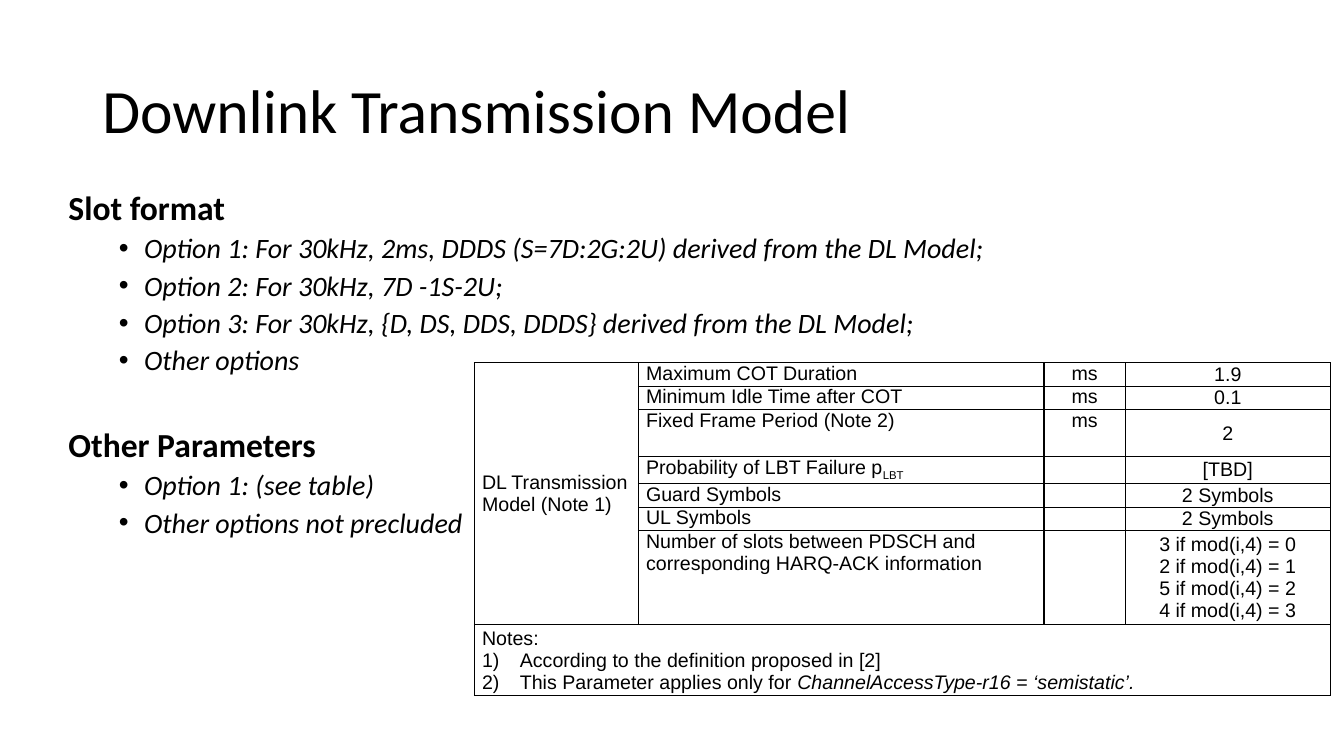
from lxml.etree import SubElement
from pptx import Presentation
from pptx.dml.color import RGBColor
from pptx.enum.text import MSO_ANCHOR, PP_ALIGN
from pptx.oxml import parse_xml
from pptx.oxml.ns import nsdecls, qn
from pptx.util import Pt

# Content
TITLE = "Downlink Transmission Model"
SECTIONS = [
    ("Slot format", [
        "Option 1: For 30kHz, 2ms, DDDS (S=7D:2G:2U) derived from the DL Model;",
        "Option 2: For 30kHz, 7D -1S-2U;",
        "Option 3: For 30kHz, {D, DS, DDS, DDDS} derived from the DL Model;",
        "Other options",
    ]),
    ("Other Parameters", [
        "Option 1: (see table)",
        "Other options not precluded",
    ]),
]
GROUP = "DL Transmission Model (Note 1)"
# Parameter, its subscript, unit, values, row height
PARAMETERS = [
    ("Maximum COT Duration", "", "ms", ["1.9"], 15.7),
    ("Minimum Idle Time after COT", "", "ms", ["0.1"], 15.7),
    ("Fixed Frame Period (Note 2)", "", "ms", ["2"], 33.6),
    ("Probability of LBT Failure p", "LBT", "", ["[TBD]"], 18),
    ("Guard Symbols", "", "", ["2 Symbols"], 15.7),
    ("UL Symbols", "", "", ["2 Symbols"], 15.7),
    ("Number of slots between PDSCH and corresponding HARQ-ACK information", "", "",
     ["3 if mod(i,4) = 0", "2 if mod(i,4) = 1", "5 if mod(i,4) = 2", "4 if mod(i,4) = 3"], 62.9),
]
NOTES_HEADING = "Notes:"
# Plain part, italic part
NOTES = [
    ("According to the definition proposed in [2]", ""),
    ("This Parameter applies only for ", "ChannelAccessType-r16 = ‘semistatic’."),
]
NOTES_HEIGHT = 47.1

# Theme
THEME = {
    "ink": RGBColor(0, 0, 0),
    "title": {"name": "Calibri", "size": Pt(44)},
    "heading": {"name": "Calibri", "size": Pt(24), "bold": True},
    "option": {"name": "Calibri", "size": Pt(20), "italic": True},
    "cell": {"name": "Arial", "size": Pt(14)},
    "border": Pt(1),
}
TITLE_BOX = (66, 28.8, 828, 104.4)
BODY_BOX = (41.8, 133.2, 851.8, 342.7)
TABLE_ORIGIN = (338.9, 259)
COLUMNS = [117.2, 289.6, 58.2, 146.3]
CELL_INSETS = {"margin_left": Pt(5.4), "margin_right": Pt(5.4), "margin_top": 0, "margin_bottom": 0}


def apply(target, values):
    for name, value in values.items():
        setattr(target, name, value)


def add_run(paragraph, text, style, **extra):
    run = paragraph.add_run()
    run.text = text
    apply(run.font, {**THEME[style], **extra})
    run.font.color.rgb = THEME["ink"]
    return run


def add_marker(paragraph, tag, indent, hanging, **attributes):
    properties = paragraph._p.get_or_add_pPr()
    properties.set("marL", str(Pt(indent)))
    properties.set("indent", str(-Pt(hanging)))
    SubElement(properties, qn(tag), **attributes)


def add_box(place, anchor):
    frame = slide.shapes.add_textbox(*map(Pt, place)).text_frame
    apply(frame, {"word_wrap": True, "vertical_anchor": anchor})
    return frame


def next_paragraph(frame):
    first = frame.paragraphs[0]
    return frame.add_paragraph() if first.runs else first


def format_cell(cell, anchor):
    apply(cell, {**CELL_INSETS, "vertical_anchor": anchor})
    cell.fill.background()
    for position, side in enumerate("LRTB"):
        cell._tc.get_or_add_tcPr().insert(position, parse_xml(
            f'<a:ln{side} {nsdecls("a")} w="{THEME["border"]}"><a:solidFill>'
            f'<a:srgbClr val="{THEME["ink"]}"/></a:solidFill></a:ln{side}>'))


def fill_cell(cell, lines, align=PP_ALIGN.LEFT):
    for line in lines:
        paragraph = next_paragraph(cell.text_frame)
        paragraph.alignment = align
        if line:
            add_run(paragraph, line, "cell")
        else:
            size = str(int(THEME["cell"]["size"].pt * 100))
            SubElement(paragraph._p, qn("a:endParaRPr"), sz=size)


deck = Presentation()
apply(deck, {"slide_width": Pt(960), "slide_height": Pt(540)})
slide = deck.slides.add_slide(deck.slide_layouts[6])

# Title
heading_line = add_box(TITLE_BOX, MSO_ANCHOR.MIDDLE).paragraphs[0]
heading_line.line_spacing = 0.9
add_run(heading_line, TITLE, "title")

# Options
body = add_box(BODY_BOX, MSO_ANCHOR.TOP)
for number, (heading, options) in enumerate(SECTIONS):
    paragraph = next_paragraph(body)
    apply(paragraph, {"line_spacing": 0.9, "space_before": Pt(37 if number else 0)})
    add_run(paragraph, heading, "heading")
    for option in options:
        paragraph = next_paragraph(body)
        apply(paragraph, {"line_spacing": 0.9, "space_before": Pt(5)})
        add_marker(paragraph, "a:buFont", 54, 18, typeface="Arial")
        add_marker(paragraph, "a:buChar", 54, 18, char="•")
        add_run(paragraph, option, "option")

# Table grid
heights = [row[-1] for row in PARAMETERS] + [NOTES_HEIGHT]
size = (sum(COLUMNS), sum(heights))
table = slide.shapes.add_table(len(heights), len(COLUMNS), *map(Pt, TABLE_ORIGIN + size)).table
apply(table, {"first_row": False, "horz_banding": False})
for column, width in zip(table.columns, COLUMNS):
    column.width = Pt(width)
for row, height in zip(table.rows, heights):
    row.height = Pt(height)
    for cell in row.cells:
        format_cell(cell, MSO_ANCHOR.MIDDLE)
        SubElement(cell.text_frame.paragraphs[0]._p, qn("a:endParaRPr"), sz="1400")

# Parameters
for index, (name, subscript, unit, values, _) in enumerate(PARAMETERS):
    _, name_cell, unit_cell, value_cell = table.rows[index].cells
    name_cell.vertical_anchor = unit_cell.vertical_anchor = MSO_ANCHOR.TOP
    for cell in (name_cell, unit_cell, value_cell):
        paragraph = cell.text_frame.paragraphs[0]._p
        paragraph.remove(paragraph.find(qn("a:endParaRPr")))
    fill_cell(name_cell, [name])
    fill_cell(unit_cell, [unit], PP_ALIGN.CENTER)
    fill_cell(value_cell, values, PP_ALIGN.CENTER)
    if subscript:
        run = add_run(name_cell.text_frame.paragraphs[0], subscript, "cell")
        run._r.get_or_add_rPr().set("baseline", "-25000")

# Merged group and notes
last = len(PARAMETERS)
group_cell, notes_cell = table.cell(0, 0), table.cell(last, 0)
group_cell.merge(table.cell(last - 1, 0))
notes_cell.merge(table.cell(last, len(COLUMNS) - 1))
fill_cell(group_cell, [GROUP])
fill_cell(notes_cell, [NOTES_HEADING])
for plain, emphasis in NOTES:
    paragraph = next_paragraph(notes_cell.text_frame)
    add_marker(paragraph, "a:buAutoNum", 27, 27, type="arabicParenR")
    add_run(paragraph, plain, "cell")
    if emphasis:
        add_run(paragraph, emphasis, "cell", italic=True)

deck.save("out.pptx")
